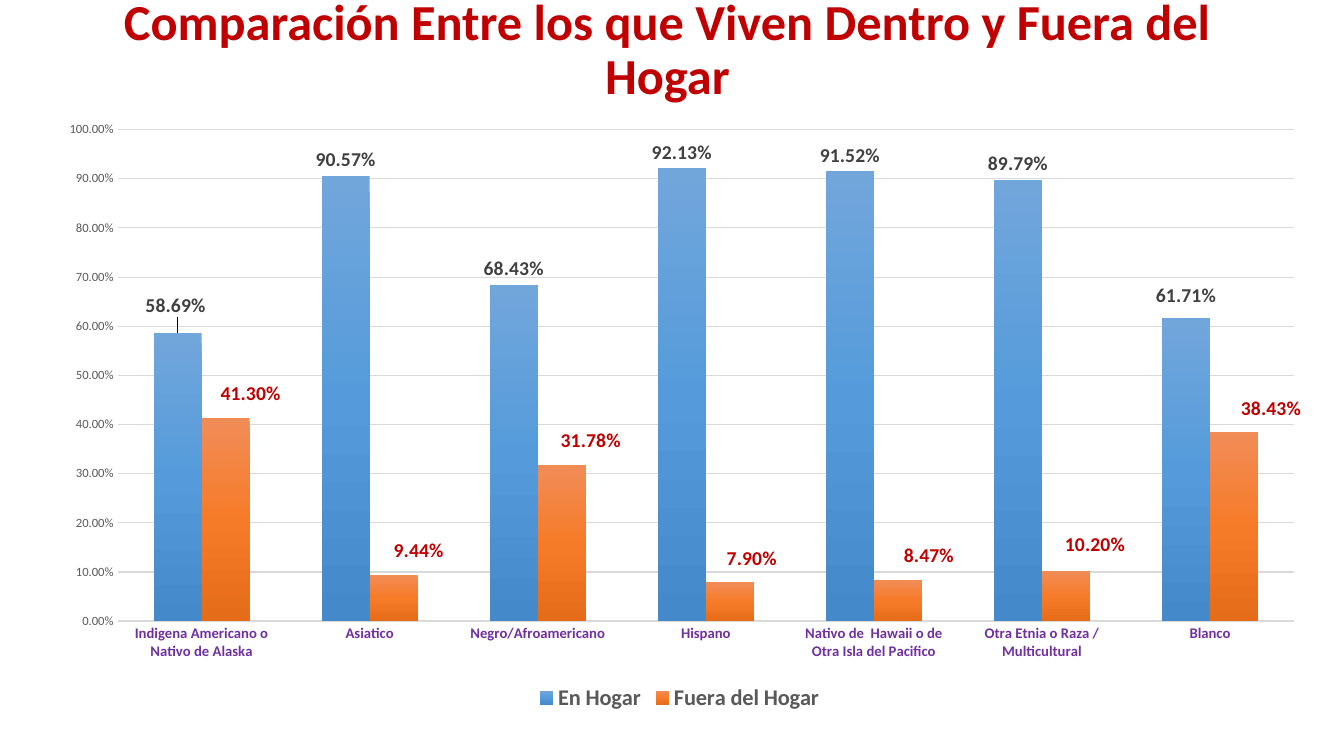
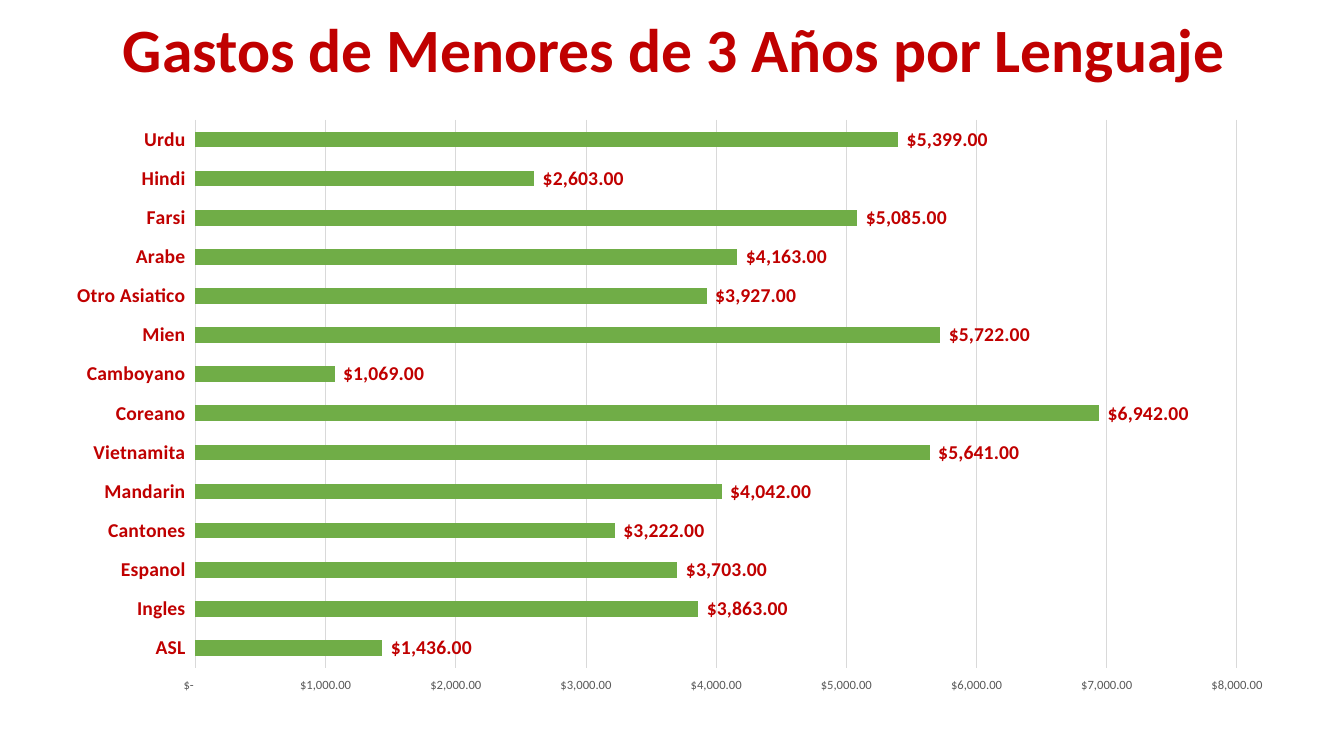
import copy
import pptx
import pptx.util
import pptx.chart.data
import pptx.dml.color
import pptx.enum.chart
import pptx.enum.text
import pptx.oxml

PX = 9071  # EMU in one px
FONT = "Calibri"
HEX = {"red": "C00000", "violet": "7030A0", "grey": "595959", "dark": "404040",
       "grid": "D9D9D9", "green": "70AD47", "black": "000000"}
BLUES = [(0, "71A6DB"), (0.5, "559BDB"), (1, "448ACA")]
ORANGES = [(0, "F18C57"), (0.5, "F67B28"), (1, "E56C19")]
MONEY = '_("$"* #,##0.00_);_("$"* \\(#,##0.00\\);_("$"* "-"??_);_(@_)'
KIND = pptx.enum.chart.XL_CHART_TYPE
TICK = pptx.enum.chart.XL_TICK_MARK
SPOT = pptx.enum.chart.XL_LABEL_POSITION

# Content: boxes are left, top, width, height in px; "moves" shift labels in px
SLIDES = [
    {"title": "Comparación Entre los que Viven Dentro y Fuera del Hogar",
     "size": 36, "head": (88, 8, 1159, 86),
     "kind": KIND.COLUMN_CLUSTERED, "box": (51, 109, 1257, 607),
     "plot": (0.053, 0.034, 0.936, 0.81),
     "format": "0.00%", "top": 1, "step": 0.1, "tick": TICK.NONE,
     "cat_font": (10.5, "violet"), "base": True, "legend": True,
     "cats": ["Indigena Americano o Nativo de Alaska", "Asiatico",
              "Negro/Afroamericano", "Hispano",
              "Nativo de  Hawaii o de Otra Isla del Pacifico",
              "Otra Etnia o Raza / Multicultural", "Blanco"],
     "series": [
         {"name": "En Hogar", "fill": BLUES, "ink": "dark",
          "vals": [0.5869, 0.9057, 0.6843, 0.9213, 0.9152, 0.8979, 0.6171],
          "moves": {0: (-2, -11), 6: (0, -6)}},
         {"name": "Fuera del Hogar", "fill": ORANGES, "ink": "red",
          "vals": [0.413, 0.0944, 0.3178, 0.079, 0.0847, 0.102, 0.3843],
          "moves": {0: (25, -8), 1: (25, -8), 2: (29, -8), 3: (22, -8),
                    4: (31, -8), 5: (29, -10), 6: (37, -8)}}]},
    {"title": "Gastos de Menores de 3 Años por Lenguaje",
     "size": 44, "head": (95, 11, 1159, 83),
     "kind": KIND.BAR_CLUSTERED, "box": (52, 108, 1237, 598),
     "plot": (0.116, 0.02, 0.842, 0.916),
     "format": MONEY, "top": 8000, "step": 1000, "tick": TICK.OUTSIDE,
     "cat_font": (14, "red"), "base": False, "legend": False,
     "cats": ["ASL", "Ingles", "Espanol", "Cantones", "Mandarin", "Vietnamita",
              "Coreano", "Camboyano", "Mien", "Otro Asiatico", "Arabe",
              "Farsi", "Hindi", "Urdu"],
     "series": [
         {"name": "Series 1", "fill": "green", "ink": "red", "moves": {},
          "vals": [1436, 3863, 3703, 3222, 4042, 5641, 6942, 1069, 5722,
                   3927, 4163, 5085, 2603, 5399]}]},
]


def rgb(name):
    return pptx.dml.color.RGBColor.from_string(HEX.get(name, name))


def place(box):
    return [pptx.util.Emu(n * PX) for n in box]


def style(font, size, ink, bold=False):
    font.name, font.size, font.bold = FONT, pptx.util.Pt(size), bold
    font.color.rgb = rgb(ink)


def layout(inner, **parts):
    """Build a manual chart layout from x, y, w and h fractions."""
    space = pptx.oxml.ns.nsdecls("c")
    body = '<c:layoutTarget val="inner"/>' if inner else ""
    if inner:
        body += '<c:xMode val="edge"/><c:yMode val="edge"/>'
    body += "".join(f'<c:{k} val="{v:.4f}"/>' for k, v in parts.items())
    return pptx.oxml.parse_xml(
        f"<c:layout {space}><c:manualLayout>{body}</c:manualLayout></c:layout>")


def add_title(slide, data):
    head = slide.shapes.title
    head.left, head.top, head.width, head.height = place(data["head"])
    frame = head.text_frame
    frame.word_wrap = True
    frame.auto_size = pptx.enum.text.MSO_AUTO_SIZE.NONE
    frame.vertical_anchor = pptx.enum.text.MSO_ANCHOR.MIDDLE
    para = frame.paragraphs[0]
    para.alignment = pptx.enum.text.PP_ALIGN.CENTER
    para.line_spacing = 0.9
    run = para.add_run()
    run.text = data["title"]
    style(run.font, data["size"], "red", True)


def paint(bars, tone):
    fill = bars.format.fill
    if isinstance(tone, str):
        fill.solid()
        fill.fore_color.rgb = rgb(tone)
        return
    fill.gradient()
    fill.gradient_angle = 270
    stops = bars._element.xpath("./c:spPr//a:gsLst")[0]
    stops.append(copy.deepcopy(stops[0]))
    for stop, (pos, ink) in zip(fill.gradient_stops, tone):
        stop.position = pos
        stop.color.rgb = rgb(ink)


def add_labels(bars, part, data):
    tags = bars.data_labels
    tags.show_value = True
    tags.number_format = data["format"]
    tags.number_format_is_linked = False
    tags.position = SPOT.OUTSIDE_END
    style(tags.font, 14, part["ink"], True)
    wide, high = data["box"][2:]
    for i, (dx, dy) in part["moves"].items():
        tag = bars.points[i].data_label
        style(tag.font, 14, part["ink"], True)
        tag.position = SPOT.OUTSIDE_END
        mark = bars._element.xpath(f"./c:dLbls/c:dLbl/c:idx[@val='{i}']")[0]
        mark.addnext(layout(False, x=dx / wide, y=dy / high))


def set_axes(chart, data):
    cat, val = chart.category_axis, chart.value_axis
    for axis in (cat, val):
        axis.major_tick_mark = data["tick"]
        axis.minor_tick_mark = TICK.NONE
        axis.format.line.fill.background()
    style(cat.tick_labels.font, *data["cat_font"], True)
    if data["base"]:
        cat.format.line.color.rgb = rgb("grid")
        cat.format.line.width = pptx.util.Pt(1)
    style(val.tick_labels.font, 9, "grey")
    val.tick_labels.number_format = data["format"]
    val.tick_labels.number_format_is_linked = False
    val.minimum_scale, val.maximum_scale = 0, data["top"]
    val.major_unit = data["step"]
    val.has_major_gridlines = True
    line = val.major_gridlines.format.line
    line.color.rgb, line.width = rgb("grid"), pptx.util.Pt(0.75)


def add_chart(slide, data):
    table = pptx.chart.data.CategoryChartData(number_format=data["format"])
    table.categories = data["cats"]
    for part in data["series"]:
        table.add_series(part["name"], part["vals"])
    chart = slide.shapes.add_chart(data["kind"], *place(data["box"]), table).chart
    style(chart.font, 10, "black")
    chart.has_title = False
    set_axes(chart, data)

    # Bars and their labels
    plot = chart.plots[0]
    plot.gap_width, plot.overlap = 150, 0
    plot.vary_by_categories = False
    for bars, part in zip(plot.series, data["series"]):
        bars.invert_if_negative = False
        paint(bars, part["fill"])
        add_labels(bars, part, data)

    # Legend
    chart.has_legend = data["legend"]
    if data["legend"]:
        chart.legend.position = pptx.enum.chart.XL_LEGEND_POSITION.BOTTOM
        chart.legend.include_in_layout = False
        style(chart.legend.font, 16, "grey", True)

    # Plot area
    area = chart._chartSpace.xpath("./c:chart/c:plotArea")[0]
    for old in area.xpath("./c:layout"):
        area.remove(old)
    area.insert(0, layout(True, **dict(zip("xywh", data["plot"]))))


def main():
    deck = pptx.Presentation()
    deck.slide_width, deck.slide_height = place((1344, 756))
    for data in SLIDES:
        slide = deck.slides.add_slide(deck.slide_layouts[5])
        add_title(slide, data)
        add_chart(slide, data)
    deck.save("out.pptx")


if __name__ == "__main__":
    main()
